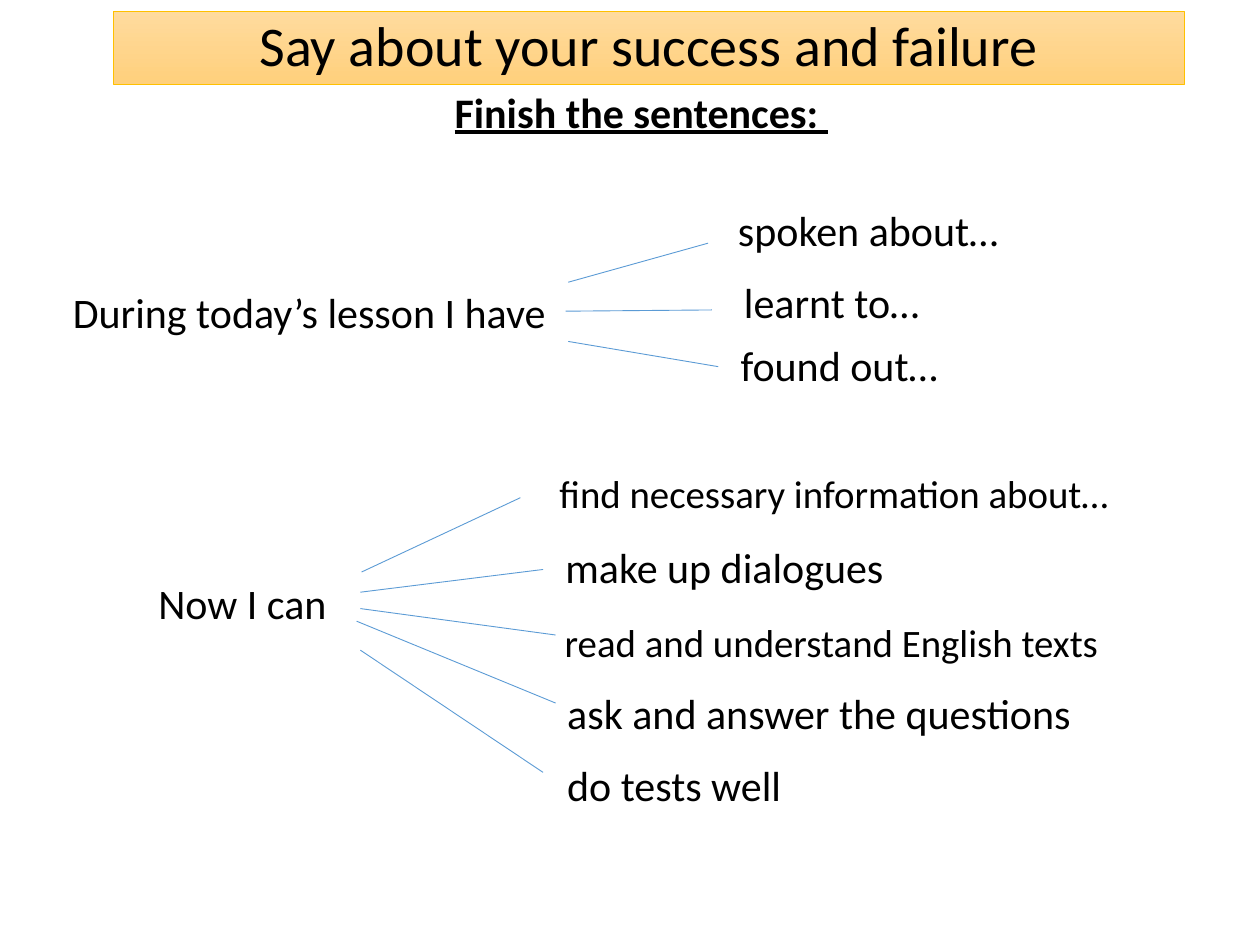
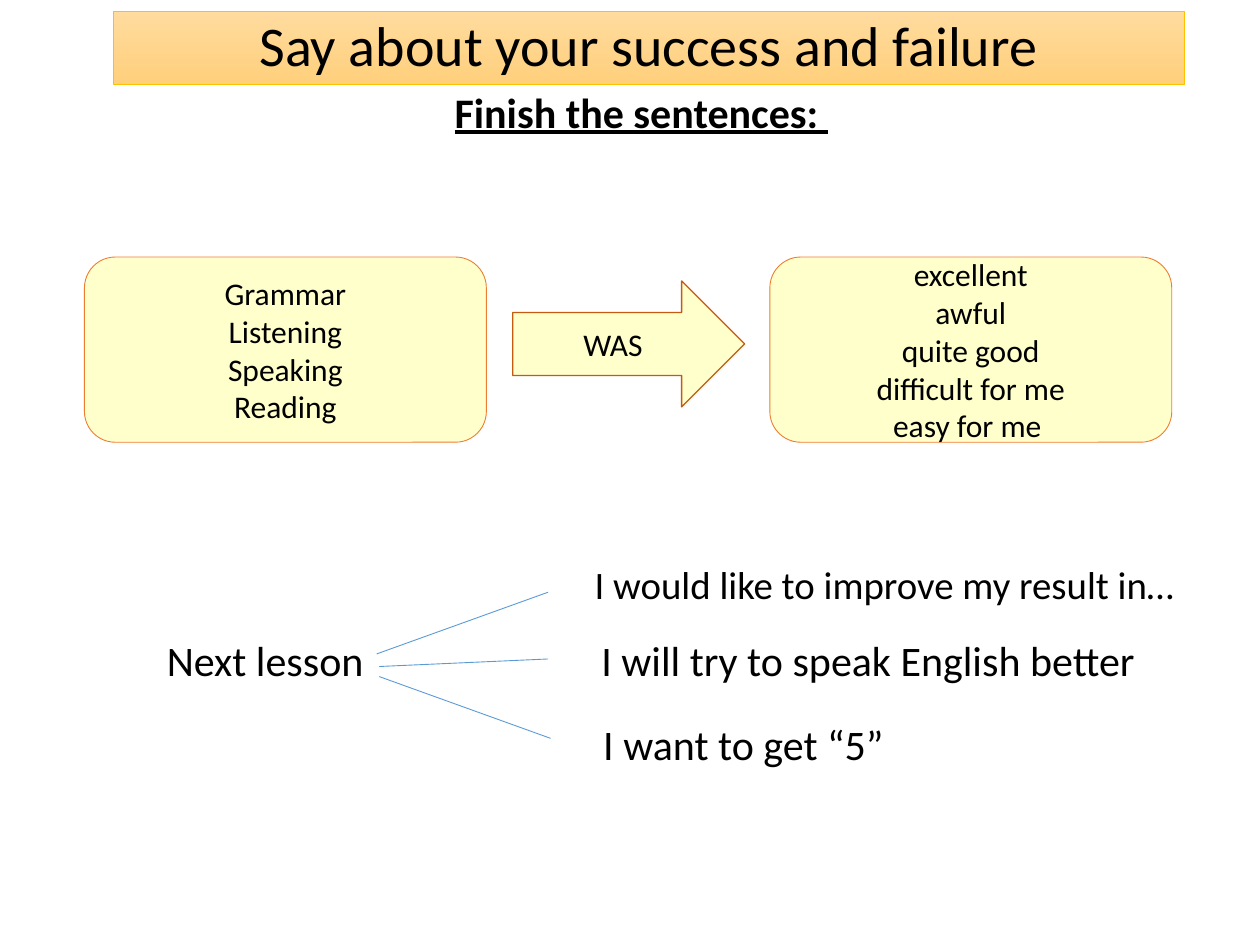
from pptx import Presentation
from pptx.dml.color import RGBColor
from pptx.enum.shapes import MSO_CONNECTOR, MSO_SHAPE
from pptx.enum.text import MSO_ANCHOR, PP_ALIGN
from pptx.oxml.ns import qn
from pptx.util import Inches, Pt
from lxml.etree import SubElement

BLACK = RGBColor(0x00, 0x00, 0x00)
BAND_TOP = RGBColor(0xFF, 0xDB, 0x9E)
BAND_BOTTOM = RGBColor(0xFF, 0xD0, 0x7C)
GOLD = RGBColor(0xFF, 0xC0, 0x00)
CREAM = RGBColor(0xFF, 0xFF, 0xCC)
ORANGE = RGBColor(0xED, 0x7D, 0x31)
RUST = RGBColor(0xC5, 0x5A, 0x11)
BLUE = RGBColor(0x5B, 0x9B, 0xD5)

COLS, ROWS = 100, 75
TITLE = "Say about your success and failure"
SUBTITLE = "Finish the sentences: "
SMALL = 22.2
STEM_W, STEM_H, ANSWER_H = 52.3, 7.4, 5.2


class Deck:
    """Style and current slide; lengths are columns and rows of the grid."""

    base_format = {"name": "Calibri", "size": Pt(24)}

    def __init__(self):
        self.prs = Presentation()
        self.prs.slide_width, self.prs.slide_height = Inches(10), Inches(7.5)
        self.s = None

    def grid(self, *lengths):
        """Turn alternating column and row counts into slide lengths."""
        units = (self.prs.slide_width / COLS, self.prs.slide_height / ROWS)
        return [round(n * units[i % 2]) for i, n in enumerate(lengths)]

    def new_slide(self):
        self.s = self.prs.slides.add_slide(self.prs.slide_layouts[6])
        band = self.shape(MSO_SHAPE.RECTANGLE, (9, 0.9, 85, 5.8), GOLD)
        band.fill.gradient()
        band.fill.gradient_angle = 270
        for stop, color in zip(band.fill.gradient_stops, (BAND_TOP, BAND_BOTTOM)):
            stop.color.rgb = color
        self.set_lines(band, [TITLE], MSO_ANCHOR.BOTTOM, 0.9, size=Pt(32))
        self.text(SUBTITLE, (12.8, 6.8, 76.2, 7.4), bold=True, underline=True)

    def set_lines(self, sp, lines, anchor, spacing, **font_format):
        tf = sp.text_frame
        tf.word_wrap = True
        tf.vertical_anchor = anchor
        for i, line in enumerate(lines):
            p = tf.add_paragraph() if i else tf.paragraphs[0]
            p.alignment = PP_ALIGN.CENTER
            p.line_spacing = spacing
            r = p.add_run()
            r.text = line
            r.font.color.rgb = BLACK
            for name, value in (self.base_format | font_format).items():
                setattr(r.font, name, value)

    def text(self, words, box, **font_format):
        sp = self.s.shapes.add_textbox(*self.grid(*box))
        self.set_lines(sp, [words], MSO_ANCHOR.TOP, 0.9, **font_format)

    def shape(self, kind, box, line_color, line_width=0.5):
        sp = self.s.shapes.add_shape(kind, *self.grid(*box))
        sp.shadow.inherit = False
        sp.line.color.rgb = line_color
        sp.line.width = Pt(line_width)
        return sp

    def card(self, kind, box, lines, line_color=ORANGE, line_width=0.5):
        sp = self.shape(kind, box, line_color, line_width)
        sp.fill.solid()
        sp.fill.fore_color.rgb = CREAM
        self.set_lines(sp, lines, MSO_ANCHOR.MIDDLE, 1.0, size=Pt(18))

    def line(self, *ends):
        c = self.s.shapes.add_connector(MSO_CONNECTOR.STRAIGHT, *self.grid(*ends))
        c.line.color.rgb = BLUE
        c.line.width = Pt(0.5)
        SubElement(c._element.spPr, qn("a:effectLst"))

    def fan(self, stem, left, top, answer_width, branches):
        """Draw a sentence opening with a line towards each possible ending."""
        self.text(stem, (left, top, STEM_W, STEM_H))
        for words, place, size, ends in branches:
            self.text(words, (*place, answer_width, ANSWER_H), size=Pt(size))
            self.line(*ends)


def build_achievements(deck):
    deck.new_slide()
    deck.fan("During today’s lesson I have", -1.6, 22.7, 45.8, [
        ("spoken about…", (46, 16.2), 24, (45.1, 22.4, 56.2, 19.3)),
        ("learnt to…", (43.1, 21.9), 24, (44.9, 24.7, 56.5, 24.6)),
        ("found out…", (43.7, 26.9), 24, (45.1, 27.1, 57, 29.1)),
    ])
    deck.fan("Now I can", -6.9, 45.8, 45.8, [
        ("find necessary information about…", (43.3, 37.2), SMALL,
         (28.7, 45.4, 41.3, 39.5)),
        ("make up dialogues", (34.6, 42.9), 24, (28.6, 47, 43.1, 45.2)),
        ("read and understand English texts", (43.1, 49), SMALL,
         (28.6, 48.3, 44.1, 50.4)),
        ("ask and answer the questions", (42.1, 54.5), 24,
         (28.3, 49.3, 44.1, 55.8)),
        ("do tests well", (30.6, 60.2), 24, (28.6, 51.6, 43.1, 61.3)),
    ])


def build_assessment(deck):
    deck.new_slide()
    skills = ["Grammar", "Listening", "Speaking", "Reading"]
    marks = ["excellent", "awful", "quite good", "difficult for me", "easy for me "]
    for left, lines in ((6.7, skills), (61.1, marks)):
        deck.card(MSO_SHAPE.ROUNDED_RECTANGLE, (left, 20.4, 31.9, 14.7), lines)
    deck.card(MSO_SHAPE.RIGHT_ARROW, (40.7, 22.3, 18.4, 10), ["WAS"], RUST, 0.75)
    deck.fan("Next lesson", -5.1, 50.3, 50.8, [
        ("I would like to improve my result in…", (44.8, 44.4), SMALL,
         (29.9, 51.9, 43.5, 47)),
        ("I will try to speak English better", (43.5, 50.3), 24,
         (30.1, 52.9, 43.5, 52.3)),
        ("I want to get “5”", (33.6, 57), 24, (30.1, 53.7, 43.7, 58.6)),
    ])


def main():
    deck = Deck()
    build_achievements(deck)
    build_assessment(deck)
    deck.prs.save("out.pptx")


if __name__ == "__main__":
    main()
